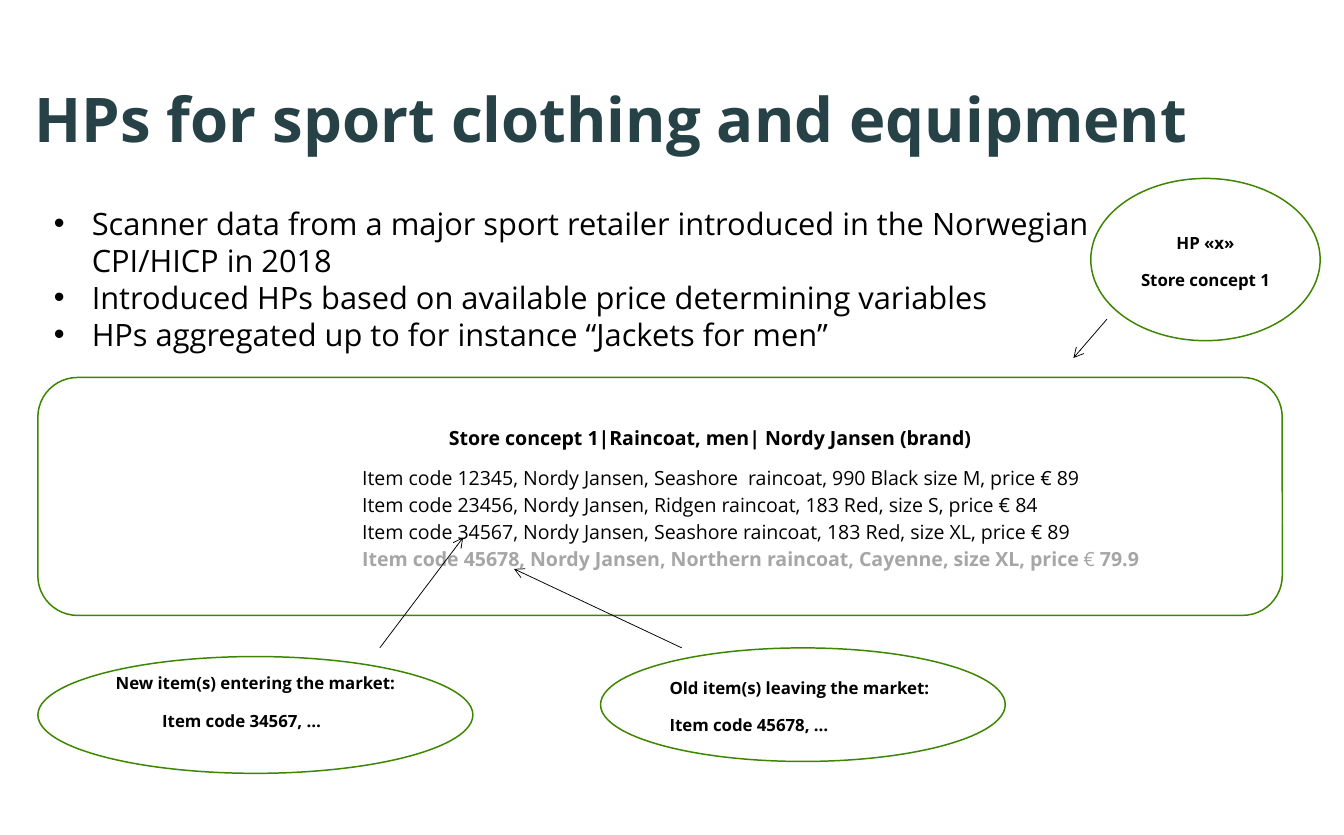
from dataclasses import dataclass

from lxml.etree import SubElement
from pptx import Presentation
from pptx.dml.color import RGBColor
from pptx.enum.shapes import MSO_CONNECTOR as Connector, MSO_SHAPE as Preset
from pptx.enum.text import MSO_ANCHOR as Anchor, PP_ALIGN as Align
from pptx.oxml.ns import qn
from pptx.util import Pt

EMU_PER_PX = 9144  # 100 px to the inch


@dataclass(frozen=True)
class Theme:
    font: str = "Open Sans"
    title_color: str = "274247"
    text: str = "000000"
    muted: str = "A6A6A6"
    outline: str = "3E8601"
    surface: str = "FFFFFF"
    title_size: float = 41
    body_size: float = 20.5
    item_size: float = 13
    callout_size: float = 11.2
    outline_width: float = 1
    arrow_width: float = 0.5
    line_spacing: float = 1.15
    gap: float = 9.3


def px(length):
    return length * EMU_PER_PX


class SlideBuilder:
    def __init__(self, slide, theme):
        self.slide = slide
        self.theme = theme

    def frame(self, shape, insets, anchor):
        """Set wrapping, anchor and insets (left, top, right, bottom)."""
        frame = shape.text_frame
        frame.word_wrap = True
        frame.vertical_anchor = anchor
        (frame.margin_left, frame.margin_top,
         frame.margin_right, frame.margin_bottom) = map(px, insets)
        return frame

    def text_box(self, left, top, width, height, insets=(10, 5, 10, 5), anchor=Anchor.TOP):
        shape = self.slide.shapes.add_textbox(px(left), px(top), px(width), px(height))
        return self.frame(shape, insets, anchor)

    def outlined(self, preset, left, top, width, height, insets=(9, 5, 9, 5)):
        shape = self.slide.shapes.add_shape(preset, px(left), px(top), px(width), px(height))
        shape.shadow.inherit = False
        shape.fill.solid()
        shape.fill.fore_color.rgb = RGBColor.from_string(self.theme.surface)
        shape.line.color.rgb = RGBColor.from_string(self.theme.outline)
        shape.line.width = Pt(self.theme.outline_width)
        return self.frame(shape, insets, Anchor.MIDDLE)

    def paragraph(self, frame, runs, size, color=None, align=Align.LEFT,
                  indent=0, bullet=None, spacing=1.0, after=0):
        """Add a paragraph of (text, bold) runs; a bullet hangs left of the indent."""
        first = frame.paragraphs[0]
        paragraph = frame.add_paragraph() if first.runs else first
        properties = paragraph._p.get_or_add_pPr()
        properties.set("marL", str(px(indent)))
        properties.set("indent", str(-px(indent) if bullet else 0))
        if bullet:
            SubElement(properties, qn("a:buFont")).set("typeface", "Arial")
            SubElement(properties, qn("a:buChar")).set("char", bullet)
        paragraph.alignment = align
        paragraph.line_spacing = spacing
        paragraph.space_after = Pt(after)
        for text, bold in runs:
            run = paragraph.add_run()
            run.text = text
            run.font.name = self.theme.font
            run.font.size = Pt(size)
            run.font.bold = bold
            run.font.color.rgb = RGBColor.from_string(color or self.theme.text)

    def callout(self, place, lines, insets=(9, 5, 9, 5)):
        """Add an ellipse with bold (text, align, indent) lines."""
        frame = self.outlined(Preset.OVAL, *place, insets)
        for text, align, indent in lines:
            self.paragraph(frame, [(text, True)], self.theme.callout_size, align=align,
                           indent=indent, spacing=self.theme.line_spacing, after=self.theme.gap)

    def arrow(self, *ends):
        connector = self.slide.shapes.add_connector(Connector.STRAIGHT, *map(px, ends))
        connector.line.color.rgb = RGBColor.from_string(self.theme.text)
        connector.line.width = Pt(self.theme.arrow_width)
        properties = connector._element.spPr
        SubElement(properties.find(qn("a:ln")), qn("a:tailEnd")).set("type", "arrow")
        SubElement(properties, qn("a:effectLst"))


def main():
    theme = Theme()
    presentation = Presentation()
    presentation.slide_width, presentation.slide_height = px(1242), px(772)
    slide = presentation.slides.add_slide(presentation.slide_layouts[6])
    builder = SlideBuilder(slide, theme)

    title = builder.text_box(22, 57, 1109, 118, (10, 0, 10, 5), Anchor.MIDDLE)
    builder.paragraph(title, [("HPs for sport clothing and equipment", True)],
                      theme.title_size, theme.title_color, spacing=0.9)

    body = builder.text_box(40, 184, 990, 165)
    for point in (
        "Scanner data from a major sport retailer introduced in the Norwegian CPI/HICP in 2018",
        "Introduced HPs based on available price determining variables",
        "HPs aggregated up to for instance “Jackets for men”",
    ):
        builder.paragraph(body, [(point, False)], theme.body_size, indent=35, bullet="•")

    product = builder.outlined(Preset.ROUNDED_RECTANGLE, 35, 349, 1150, 220)
    builder.paragraph(product, [("Store concept 1|Raincoat, men| Nordy Jansen (brand)", True)],
                      theme.item_size, align=Align.CENTER, indent=92,
                      spacing=theme.line_spacing, after=theme.gap)
    for item in (
        "Item code 12345, Nordy Jansen, Seashore  raincoat, 990 Black size M, price € 89",
        "Item code 23456, Nordy Jansen, Ridgen raincoat, 183 Red, size S, price € 84",
        "Item code 34567, Nordy Jansen, Seashore raincoat, 183 Red, size XL, price € 89",
    ):
        builder.paragraph(product, [(item, False)], theme.item_size, indent=280,
                          spacing=theme.line_spacing)
    leaving_item = [
        ("Item code 45678, Nordy Jansen, Northern raincoat, Cayenne, size XL, price ", True),
        ("€ ", False),
        ("79.9", True),
    ]
    builder.paragraph(product, leaving_item, theme.item_size, theme.muted, indent=280,
                      spacing=theme.line_spacing, after=theme.gap)

    builder.callout((1008, 165, 212, 150), [
        ("HP «x»", Align.CENTER, 0),
        ("Store concept 1", Align.CENTER, 0),
    ])
    builder.callout((35, 607, 402, 108), [
        ("New item(s) entering the market:", Align.CENTER, 0),
        ("Item code 34567, …", Align.LEFT, 47),
    ], insets=(9, 5, 9, 32))
    builder.callout((555, 599, 374, 105), [
        ("Old item(s) leaving the market:", Align.LEFT, 0),
        ("Item code 45678, …", Align.LEFT, 0),
    ])

    builder.arrow(1023, 295, 992, 331)
    builder.arrow(351, 599, 428, 497)
    builder.arrow(630, 599, 475, 526)

    presentation.save("out.pptx")


if __name__ == "__main__":
    main()
